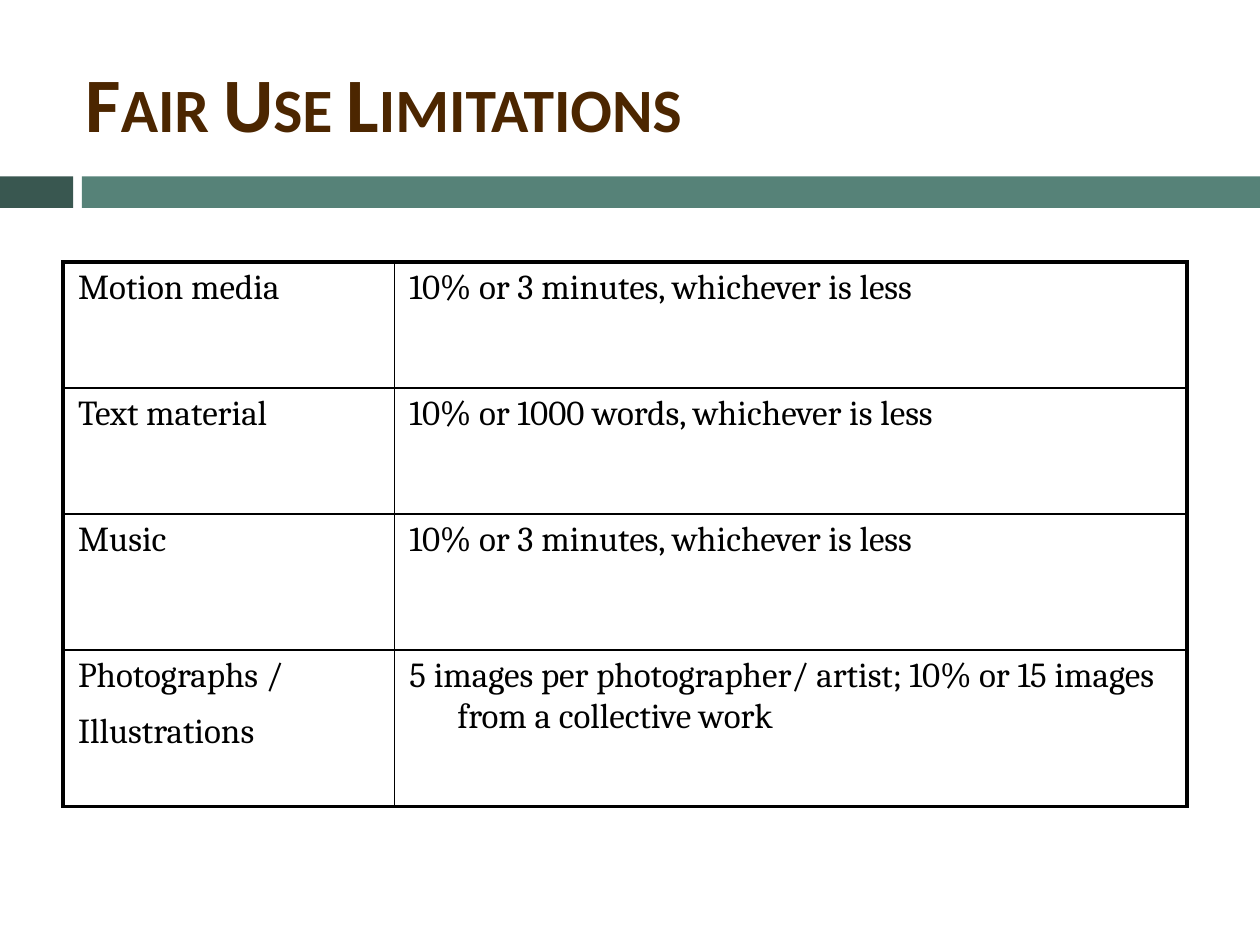
from lxml.etree import SubElement
from pptx import Presentation
from pptx.dml.color import RGBColor
from pptx.enum.shapes import MSO_SHAPE as Shape
from pptx.enum.text import MSO_ANCHOR as Anchor
from pptx.oxml.ns import qn
from pptx.util import Inches, Pt

DARK_TEAL = RGBColor(0x39, 0x57, 0x50)
TEAL = RGBColor(0x56, 0x82, 0x78)
BROWN = RGBColor(0x4C, 0x26, 0x00)
BLACK = RGBColor(0x00, 0x00, 0x00)

HANGING = Inches(0.38)
THIN, THICK = Pt(1), Pt(2.25)
COLUMNS = (2.63, 6.29)
ROWS = (1, 1, 1.08, 1.24)
LIMITS = (
    ("Motion media", "10% or 3 minutes, whichever is less"),
    ("Text material", "10% or 1000 words, whichever is less"),
    ("Music", "10% or 3 minutes, whichever is less"),
    (
        "Photographs /\nIllustrations",
        "5 images per photographer/ artist; 10% or 15 images from a collective work",
    ),
)


def add_title(page, box, text):
    """Place the small-caps heading in its box."""
    frame = page.shapes.add_textbox(*box).text_frame
    frame.word_wrap = True
    frame.vertical_anchor = Anchor.MIDDLE
    para = frame.paragraphs[0]
    span = para.add_run()
    span.text = text
    font = span.font
    font.name, font.size, font.bold = "Calibri", Pt(44), True
    font.color.rgb = BROWN
    span._r.get_or_add_rPr().set("cap", "small")


def add_band(page, box):
    """Split a full-width band into a short dark block and a long light bar."""
    left, top, width, height = box
    block, start = int(width * 0.058), int(width * 0.065)
    parts = ((left, block, DARK_TEAL), (left + start, width - start, TEAL))
    for part_left, part_width, colour in parts:
        bar = page.shapes.add_shape(Shape.RECTANGLE, part_left, top, part_width, height)
        bar.shadow.inherit = False
        bar.fill.solid()
        bar.fill.fore_color.rgb = colour
        bar.line.fill.background()


def set_borders(cell, widths):
    """Draw the left, right, top and bottom edges of a cell."""
    properties = cell._tc.get_or_add_tcPr()
    for side, width in zip("LRTB", widths):
        line = SubElement(properties, qn(f"a:ln{side}"), w=str(width))
        fill = SubElement(line, qn("a:solidFill"))
        SubElement(fill, qn("a:srgbClr"), val=str(BLACK))


def fill_cell(cell, text):
    """Write the text of a cell with hanging indents."""
    cell.fill.background()
    cell.margin_left = cell.margin_right = Inches(0.12)
    cell.margin_top = cell.margin_bottom = Inches(0.05)
    cell.text = text
    for para in cell.text_frame.paragraphs:
        para.space_after = Pt(9)
        para.font.name, para.font.size = "Cambria", Pt(20)
        para.font.color.rgb = BLACK
        properties = para._p.get_or_add_pPr()
        properties.set("marL", str(HANGING))
        properties.set("indent", str(-HANGING))


def add_limits_table(page, box):
    """Place the table of limits with a thick frame and thin inner rules."""
    table = page.shapes.add_table(len(ROWS), len(COLUMNS), *box).table
    table.first_row = table.horz_banding = False
    for column, share in zip(table.columns, COLUMNS):
        column.width = int(box[2] * share / sum(COLUMNS))
    for row, share in zip(table.rows, ROWS):
        row.height = int(box[3] * share / sum(ROWS))
    last_row, last_column = len(ROWS) - 1, len(COLUMNS) - 1
    for r, texts in enumerate(LIMITS):
        for c, text in enumerate(texts):
            cell = table.cell(r, c)
            outer = (c == 0, c == last_column, r == 0, r == last_row)
            set_borders(cell, [THICK if edge else THIN for edge in outer])
            fill_cell(cell, text)


def main():
    """Build the slide and save the deck."""
    deck = Presentation()
    deck.slide_width, deck.slide_height = Inches(10), Inches(7.5)
    page = deck.slides.add_slide(deck.slide_layouts[6])

    def region(left, top, width, height):
        """Turn shares of the slide into a box."""
        wide, high = deck.slide_width, deck.slide_height
        return int(left * wide), int(top * high), int(width * wide), int(height * high)

    add_band(page, region(0, 1.4 / 7.5, 1, 0.25 / 7.5))
    add_title(page, region(0.058, 0.33 / 7.5, 0.9, 0.95 / 7.5), "Fair Use Limitations")
    add_limits_table(page, region(0.05, 2.08 / 7.5, 0.892, 4.32 / 7.5))
    deck.save("out.pptx")


if __name__ == "__main__":
    main()
